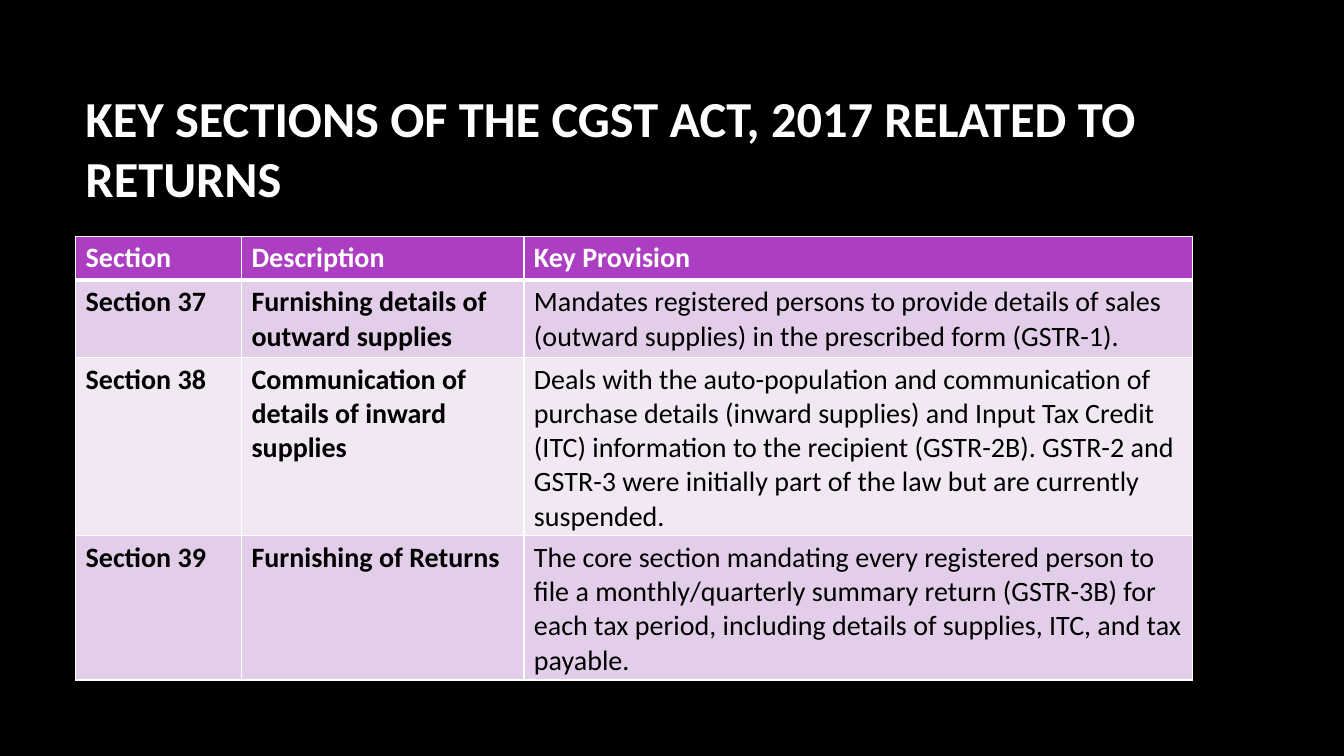
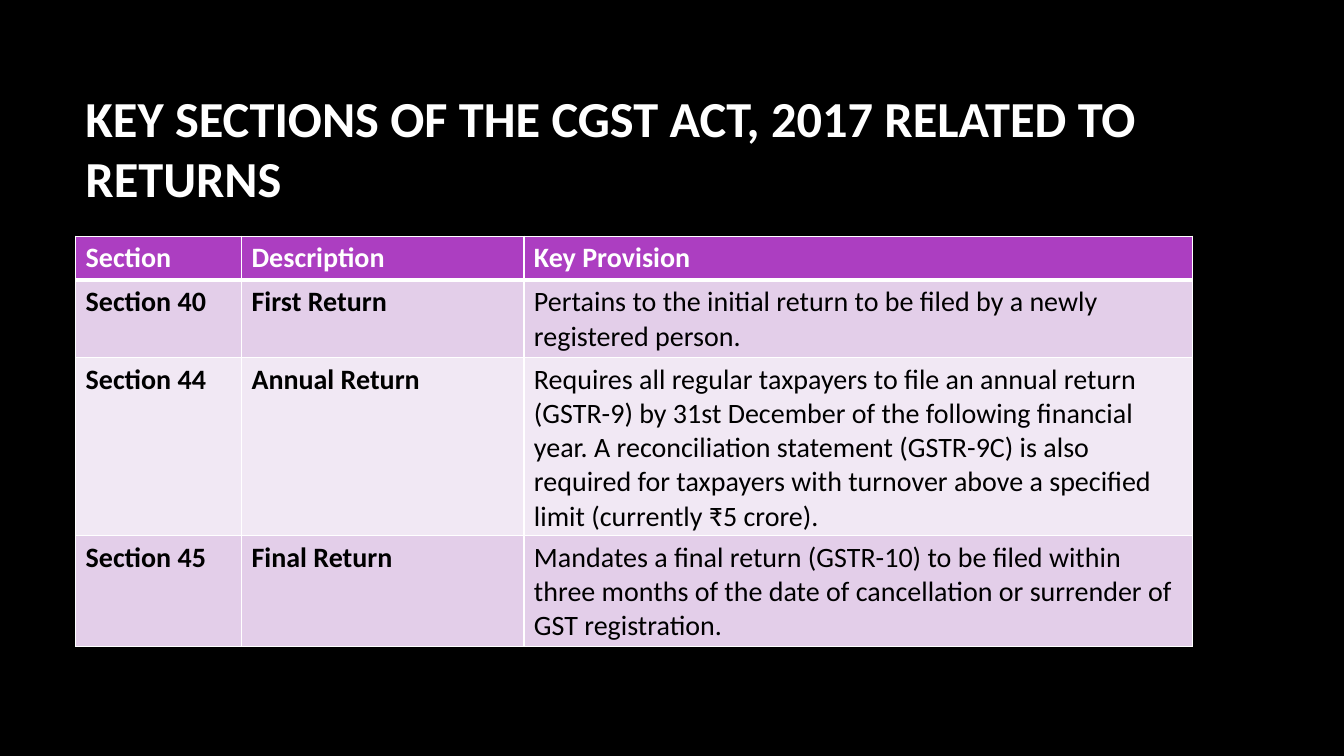
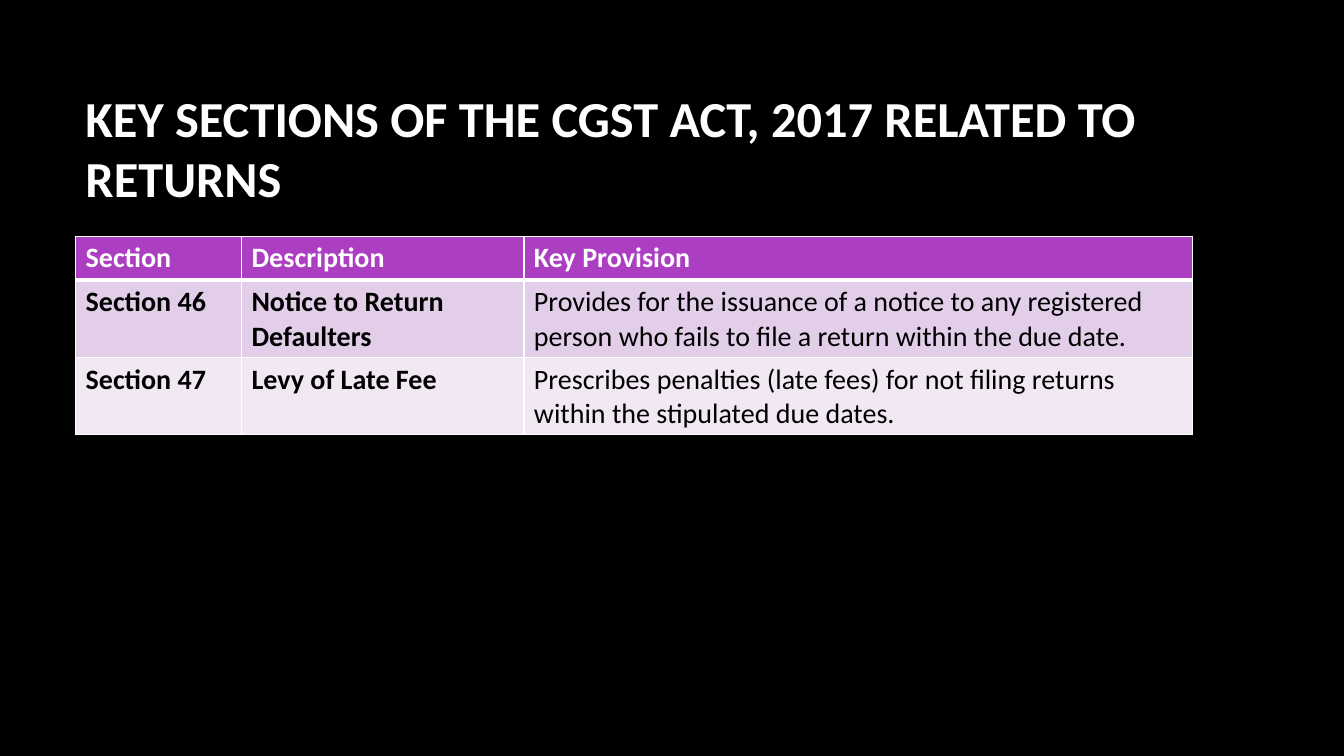
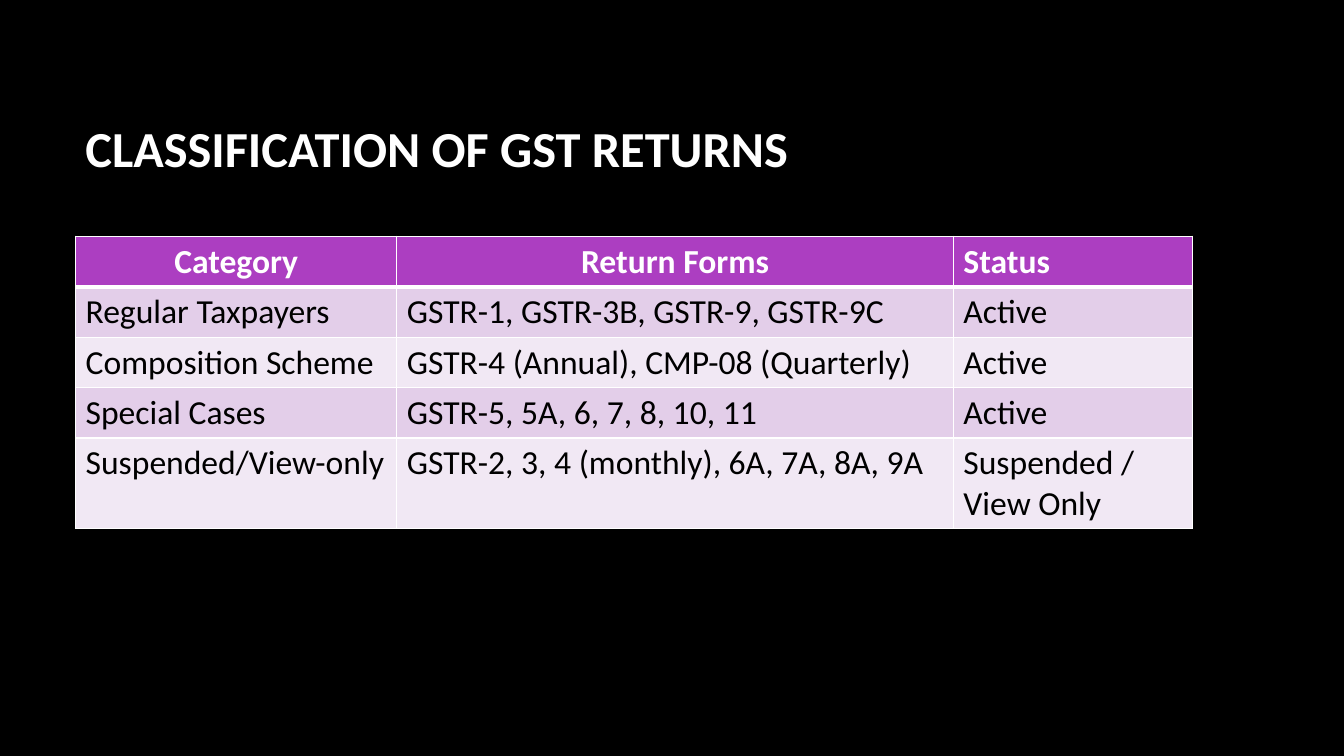
import pptx
import pptx.dml.color
import pptx.enum.text
import pptx.util
import lxml.etree
from pptx.oxml import ns

RGB = pptx.dml.color.RGBColor
ALIGN = pptx.enum.text.PP_ALIGN

PX = 9525
WIDE, HIGH = 1280, 720
LEFT, SPAN = 72, 1064
FONT = "Calibri"

BLACK = RGB(0x00, 0x00, 0x00)
WHITE = RGB(0xFF, 0xFF, 0xFF)
PURPLE = RGB(0xAC, 0x3E, 0xC1)
LILAC = RGB(0xE3, 0xCE, 0xE9)
PALE = RGB(0xF1, 0xE8, 0xF4)

ACT = "KEY SECTIONS OF THE CGST ACT, 2017 RELATED TO RETURNS"
ACT_HEAD = ["Section", "Description", "Key Provision"]
ACT_COLS = [158, 269, 637]
ACT_PAGES = [
    [
        ["Section 37", "Furnishing details of outward supplies",
         "Mandates registered persons to provide details of sales (outward "
         "supplies) in the prescribed form (GSTR-1)."],
        ["Section 38", "Communication of details of inward supplies",
         "Deals with the auto-population and communication of purchase "
         "details (inward supplies) and Input Tax Credit (ITC) information "
         "to the recipient (GSTR-2B). GSTR-2 and GSTR-3 were initially part "
         "of the law but are currently suspended."],
        ["Section 39", "Furnishing of Returns",
         "The core section mandating every registered person to file a "
         "monthly/quarterly summary return (GSTR-3B) for each tax period, "
         "including details of supplies, ITC, and tax payable."],
    ],
    [
        ["Section 40", "First Return",
         "Pertains to the initial return to be filed by a newly registered "
         "person."],
        ["Section 44", "Annual Return",
         "Requires all regular taxpayers to file an annual return (GSTR-9) "
         "by 31st December of the following financial year. A "
         "reconciliation statement (GSTR-9C) is also required for taxpayers "
         "with turnover above a specified limit (currently ₹5 crore)."],
        ["Section 45", "Final Return",
         "Mandates a final return (GSTR-10) to be filed within three months "
         "of the date of cancellation or surrender of GST registration."],
    ],
    [
        ["Section 46", "Notice to Return Defaulters",
         "Provides for the issuance of a notice to any registered person "
         "who fails to file a return within the due date."],
        ["Section 47", "Levy of Late Fee",
         "Prescribes penalties (late fees) for not filing returns within "
         "the stipulated due dates."],
    ],
]

FORM_HEAD = ["Category", "Return Forms", "Status"]
FORM_COLS = [306, 530, 228]
FORMS = [
    ["Regular Taxpayers", "GSTR-1, GSTR-3B, GSTR-9, GSTR-9C", "Active"],
    ["Composition Scheme", "GSTR-4 (Annual), CMP-08 (Quarterly)", "Active"],
    ["Special Cases", "GSTR-5, 5A, 6, 7, 8, 10, 11", "Active"],
    ["Suspended/View-only", "GSTR-2, 3, 4 (monthly), 6A, 7A, 8A, 9A",
     "Suspended / View Only"],
]


def write(frame, text, size=20, color=BLACK, bold=False, align=ALIGN.LEFT):
    frame.word_wrap = True
    para = frame.paragraphs[0]
    para.alignment = align
    run = para.add_run()
    run.text = text
    font = run.font
    font.name, font.size, font.bold = FONT, pptx.util.Pt(size), bold
    font.color.rgb = color


def edge(cell, side, width):
    """Draw a white border on one side: L, R, T or B."""
    props = cell._tc.get_or_add_tcPr()
    line = lxml.etree.SubElement(props, ns.qn("a:ln" + side),
                                 w=str(pptx.util.Pt(width)))
    fill = lxml.etree.SubElement(line, ns.qn("a:solidFill"))
    lxml.etree.SubElement(fill, ns.qn("a:srgbClr"), val=str(WHITE))


def paint(cell, row):
    """Give a cell its borders and the fill of its row."""
    # The rule under the header is shared by rows 0 and 1.
    rules = {"L": 1, "R": 1, "T": 3 if row == 1 else 1,
             "B": 3 if row == 0 else 1}
    for side, width in rules.items():
        edge(cell, side, width)
    cell.fill.solid()
    band = LILAC if row % 2 else PALE
    cell.fill.fore_color.rgb = band if row else PURPLE


def page(deck, title):
    slide = deck.slides.add_slide(deck.slide_layouts[6])
    back = slide.background.fill
    back.solid()
    back.fore_color.rgb = BLACK
    box = slide.shapes.add_textbox(LEFT * PX, 64 * PX, SPAN * PX, 153 * PX)
    box.text_frame.vertical_anchor = pptx.enum.text.MSO_ANCHOR.MIDDLE
    write(box.text_frame, title, size=36, color=WHITE, bold=True)
    return slide


def grid(slide, head, body, cols, size=20, bold=0, center=0):
    """Add a table; bold counts bold body columns, center centred heads."""
    rows = [head] + body
    high = 39 * len(rows)
    table = slide.shapes.add_table(len(rows), len(cols), LEFT * PX, 225 * PX,
                                   SPAN * PX, high * PX).table
    for col, width in zip(table.columns, cols):
        col.width = width * PX
    for r, texts in enumerate(rows):
        for c, text in enumerate(texts):
            cell = table.cell(r, c)
            paint(cell, r)
            top = r == 0
            write(cell.text_frame, text, size=size,
                  color=WHITE if top else BLACK, bold=top or c < bold,
                  align=ALIGN.CENTER if top and c < center else ALIGN.LEFT)


def main():
    deck = pptx.Presentation()
    deck.slide_width, deck.slide_height = WIDE * PX, HIGH * PX
    for body in ACT_PAGES:
        grid(page(deck, ACT), ACT_HEAD, body, ACT_COLS, bold=2)
    grid(page(deck, "CLASSIFICATION OF GST RETURNS"), FORM_HEAD, FORMS,
         FORM_COLS, size=24, center=2)
    deck.save("out.pptx")


if __name__ == "__main__":
    main()
